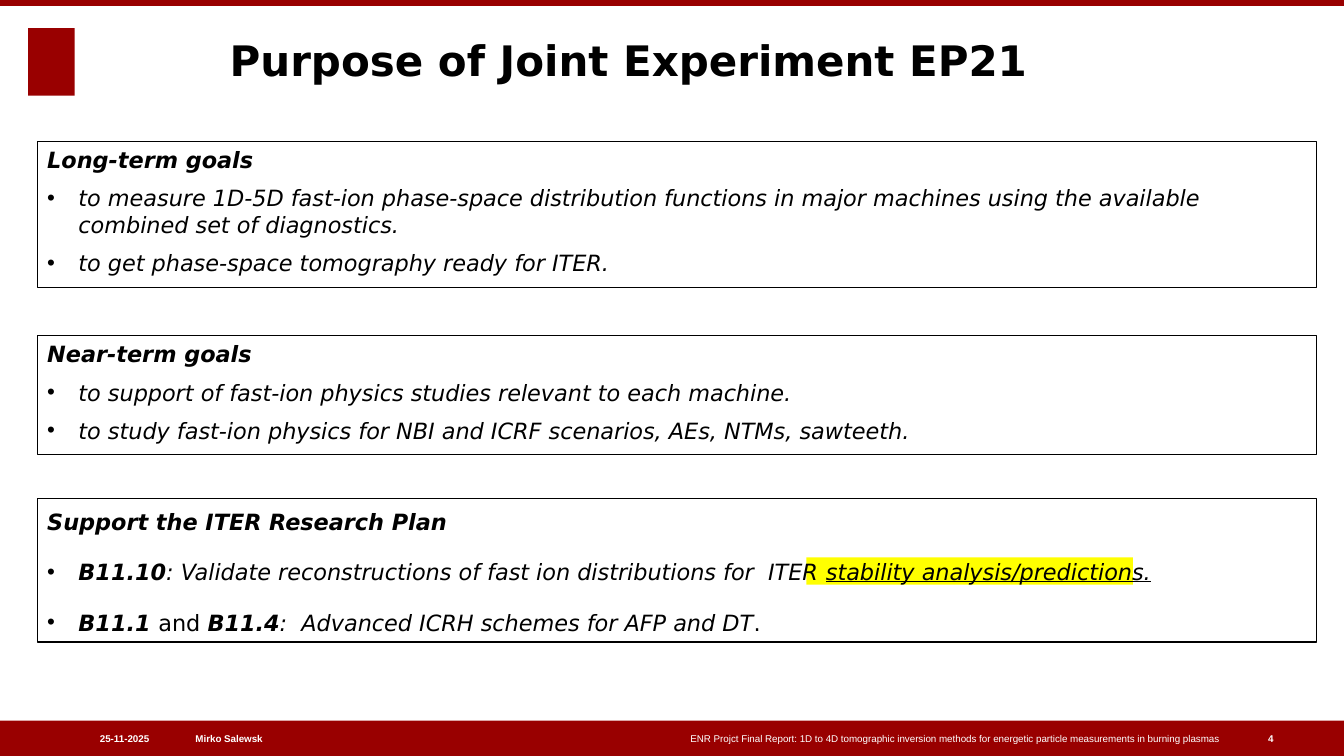
from lxml.etree import SubElement
from pptx import Presentation
from pptx.dml.color import RGBColor
from pptx.enum.shapes import MSO_SHAPE as Shape
from pptx.enum.text import MSO_ANCHOR as Anchor, PP_ALIGN as Align
from pptx.oxml.ns import qn
from pptx.util import Inches, Pt

WIDTH, HEIGHT = Inches(13.33), Inches(7.5)
RED, YELLOW, BLACK, WHITE = "990000", "FFFF00", "000000", "FFFFFF"
BODY_FONT, FOOTER_FONT = "DejaVu Sans", "Arial"
BULLET_INDENT = Inches(0.31)
FOOTER_TOP, FOOTER_HEIGHT = 95.33, 4.67

# Each run is (text, style letters): b bold, i italic, u underlined.
LONG_TERM = [
    [("Long-term goals", "bi")],
    [("to measure 1D-5D fast-ion phase-space distribution functions in major "
      "machines using the available combined set of diagnostics.", "i")],
    [("to get phase-space tomography ready for ITER.", "i")],
]
NEAR_TERM = [
    [("Near-term goals", "bi")],
    [("to support of fast-ion physics studies relevant to each machine.", "i")],
    [("to study fast-ion physics for NBI and ICRF scenarios, AEs, NTMs, sawteeth.", "i")],
]
RESEARCH_PLAN = [
    [("Support the ITER Research Plan", "bi")],
    [("B11.10", "bi"),
     (": Validate reconstructions of fast ion distributions for  ITER ", "i"),
     ("stability analysis/predictions.", "iu")],
    [("B11.1 ", "bi"), ("and ", ""), ("B11.4", "bi"),
     (":  Advanced ICRH schemes for AFP and DT", "i"), (".", "")],
]
FOOTER = [
    (2.02, 9.08, "25-11-2025", "b", Align.RIGHT),
    (14.55, 27.9, "Mirko Salewsk", "b", Align.LEFT),
    (45.83, 45.08, "ENR Projct Final Report: 1D to 4D tomographic inversion methods "
     "for energetic particle measurements in burning plasmas ", "", Align.RIGHT),
    (94.35, 3.53, "4", "b", Align.LEFT),
]


def color(hex_string):
    return RGBColor.from_string(hex_string)


def place(left, top, width, height):
    """Turn percentages of the slide into lengths."""
    return (int(WIDTH * left / 100), int(HEIGHT * top / 100),
            int(WIDTH * width / 100), int(HEIGHT * height / 100))


def add_run(paragraph, text, style, size, font, ink):
    run = paragraph.add_run()
    run.text = text
    run.font.name = font
    run.font.size = Pt(size)
    run.font.color.rgb = color(ink)
    run.font.bold = "b" in style
    run.font.italic = "i" in style
    run.font.underline = "u" in style


def add_block(slide, area, fill=None):
    """Add a rectangle, filled without outline or outlined without fill."""
    shape = slide.shapes.add_shape(Shape.RECTANGLE, *place(*area))
    shape.shadow.inherit = False
    if fill:
        shape.fill.solid()
        shape.fill.fore_color.rgb = color(fill)
        shape.line.fill.background()
    else:
        shape.fill.background()
        shape.line.color.rgb = color(BLACK)
        shape.line.width = Pt(0.75)
    return shape


def add_label(slide, area, text, style, size, font, ink, align=Align.LEFT):
    frame = slide.shapes.add_textbox(*place(*area)).text_frame
    frame.word_wrap = True
    paragraph = frame.paragraphs[0]
    paragraph.alignment = align
    add_run(paragraph, text, style, size, font, ink)
    return frame


def add_bullet(paragraph):
    properties = paragraph._p.get_or_add_pPr()
    properties.set("marL", str(BULLET_INDENT))
    properties.set("indent", str(-BULLET_INDENT))
    SubElement(properties, qn("a:buFont")).set("typeface", FOOTER_FONT)
    SubElement(properties, qn("a:buChar")).set("char", "•")


def add_goals(slide, top, height, paragraphs, airy=False):
    """Add a framed heading with bullets; airy opens up the line spacing."""
    frame = add_block(slide, (2.78, top, 95.18, height)).text_frame
    frame.word_wrap = True
    frame.vertical_anchor = Anchor.TOP
    for index, runs in enumerate(paragraphs):
        paragraph = frame.add_paragraph() if index else frame.paragraphs[0]
        paragraph.alignment = Align.JUSTIFY if airy else Align.LEFT
        if airy:
            paragraph.line_spacing = 1.15
            paragraph.space_before = paragraph.space_after = Pt(7)
        elif index:
            paragraph.space_before = Pt(8)
        if index:
            add_bullet(paragraph)
        for text, style in runs:
            add_run(paragraph, text, style, 16, BODY_FONT, BLACK)


def add_footer(slide):
    add_block(slide, (0, FOOTER_TOP, 100, FOOTER_HEIGHT), RED)
    for left, width, text, style, align in FOOTER:
        area = (left, FOOTER_TOP, width, FOOTER_HEIGHT)
        frame = add_label(slide, area, text, style, 7, FOOTER_FONT, WHITE, align)
        frame.vertical_anchor = Anchor.MIDDLE
        frame.margin_left = frame.margin_right = 0
        frame.margin_top = frame.margin_bottom = 0


def main():
    presentation = Presentation()
    presentation.slide_width, presentation.slide_height = WIDTH, HEIGHT
    slide = presentation.slides.add_slide(presentation.slide_layouts[6])

    add_block(slide, (0, 0, 100, 0.8), RED)
    add_block(slide, (2.1, 3.73, 3.45, 8.93), RED)
    add_footer(slide)
    add_label(slide, (16.35, 3.87, 63.75, 8.8), "Purpose of Joint Experiment EP21",
              "b", 30, BODY_FONT, BLACK)

    add_block(slide, (60, 73.73, 24.3, 3.6), YELLOW)
    add_goals(slide, 18.67, 19.33, LONG_TERM)
    add_goals(slide, 44.4, 15.73, NEAR_TERM)
    add_goals(slide, 66, 18.93, RESEARCH_PLAN, airy=True)
    presentation.save("out.pptx")


if __name__ == "__main__":
    main()
